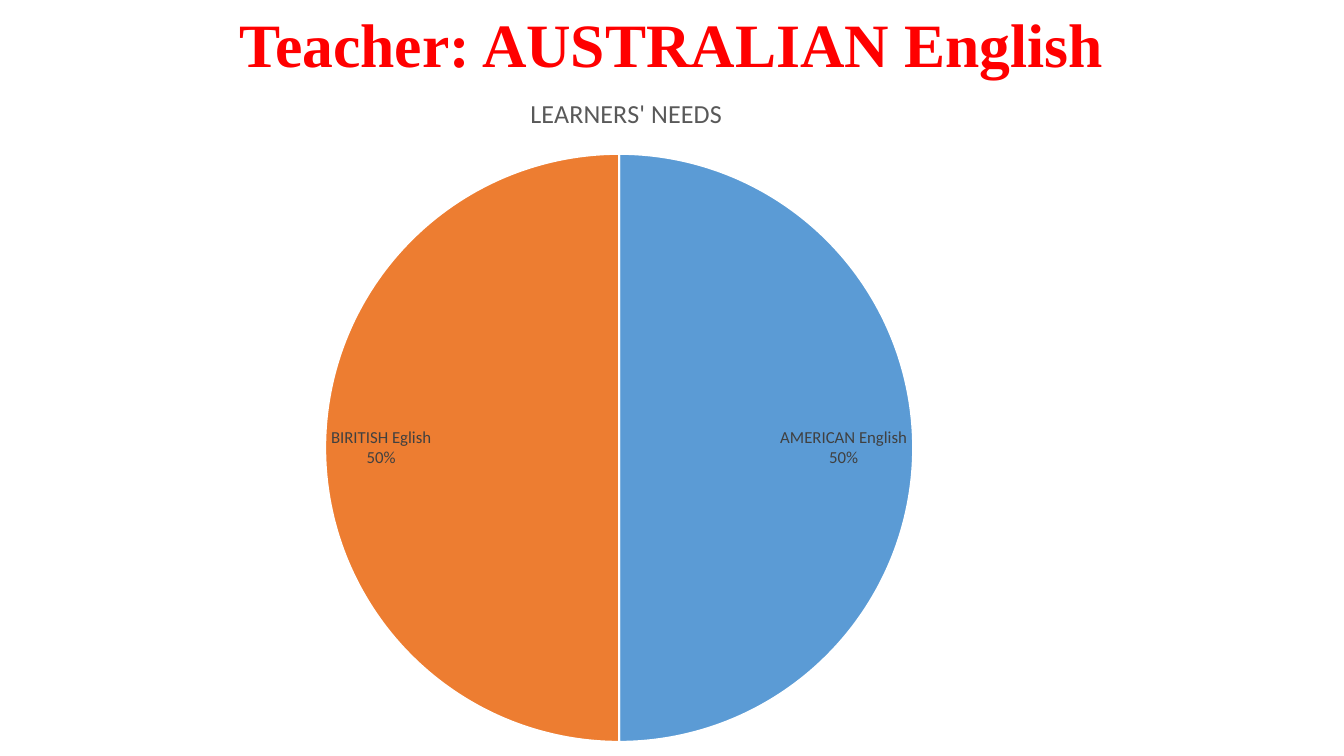
from dataclasses import dataclass

from pptx import Presentation
from pptx.chart.chart import Chart
from pptx.chart.data import CategoryChartData
from pptx.dml.color import RGBColor
from pptx.enum.chart import XL_CHART_TYPE as ChartType, XL_LABEL_POSITION as LabelPosition
from pptx.enum.text import MSO_ANCHOR as Anchor, PP_ALIGN as Align
from pptx.oxml import parse_xml
from pptx.oxml.ns import nsdecls, qn
from pptx.slide import Slide
from pptx.text.text import Font
from pptx.util import Cm, Pt

RED = RGBColor(0xFF, 0x00, 0x00)
BLUE = RGBColor(0x5B, 0x9B, 0xD5)
ORANGE = RGBColor(0xED, 0x7D, 0x31)
WHITE = RGBColor(0xFF, 0xFF, 0xFF)
BLACK = RGBColor(0x00, 0x00, 0x00)
GRAY = RGBColor(0x59, 0x59, 0x59)
DARK_GRAY = RGBColor(0x40, 0x40, 0x40)

NEEDS_TITLE = "LEARNERS' NEEDS"


@dataclass(frozen=True)
class Need:
    variety: str
    share: int
    color: RGBColor


NEEDS = [
    Need("AMERICAN English", 50, BLUE),
    Need("BIRITISH Eglish", 50, ORANGE),
]


def style(font: Font, name: str, size: float, color: RGBColor, bold: bool = False) -> None:
    font.name = name
    font.size = Pt(size)
    font.bold = bold
    font.color.rgb = color


def add_heading(slide: Slide) -> None:
    heading = slide.shapes.title
    heading.left, heading.top = Cm(2.33), Cm(-0.64)
    heading.width, heading.height = Cm(29.21), Cm(3.68)
    frame = heading.text_frame
    frame.text = "Teacher: AUSTRALIAN English"
    frame.vertical_anchor = Anchor.MIDDLE
    frame.word_wrap = True
    line = frame.paragraphs[0]
    line.alignment = Align.CENTER
    line.line_spacing = 0.9
    style(line.font, "Times New Roman", 44, RED, bold=True)


def place_pie(chart: Chart, x: float, y: float, w: float, h: float) -> None:
    area = chart.plots[0]._element.getparent()
    for old in area.findall(qn("c:layout")):
        area.remove(old)
    area.insert(0, parse_xml(
        f'<c:layout {nsdecls("c")}><c:manualLayout><c:layoutTarget val="inner"/>'
        '<c:xMode val="edge"/><c:yMode val="edge"/>'
        f'<c:x val="{x}"/><c:y val="{y}"/><c:w val="{w}"/><c:h val="{h}"/>'
        "</c:manualLayout></c:layout>"
    ))


def add_needs_pie(slide: Slide) -> None:
    needs = CategoryChartData()
    needs.categories = [need.variety for need in NEEDS]
    needs.add_series(NEEDS_TITLE, [need.share for need in NEEDS])
    chart = slide.shapes.add_chart(
        ChartType.PIE, Cm(-2.29), Cm(1.8), Cm(36.15), Cm(17.25), needs
    ).chart
    style(chart.font, "Calibri", 10, BLACK)
    chart.has_legend = False
    chart.has_title = True
    caption = chart.chart_title.text_frame
    caption.text = NEEDS_TITLE
    style(caption.paragraphs[0].font, "Calibri", 18.6, GRAY)
    place_pie(chart, 0.29, 0.12, 0.41, 0.86)

    pie = chart.plots[0]
    pie.vary_by_categories = True
    for index, need in enumerate(NEEDS):
        wedge = pie.series[0].points[index].format
        wedge.fill.solid()
        wedge.fill.fore_color.rgb = need.color
        wedge.line.color.rgb = WHITE
        wedge.line.width = Pt(1.5)

    labels = pie.series[0].data_labels
    labels.show_category_name = True
    labels.show_percentage = True
    labels.show_value = False
    labels.position = LabelPosition.INSIDE_END
    style(labels.font, "Calibri", 12, DARK_GRAY)
    labels._element.find(qn("c:showBubbleSize")).addnext(
        parse_xml(f'<c:separator {nsdecls("c")}>\n</c:separator>')
    )


def main() -> None:
    deck = Presentation()
    deck.slide_width, deck.slide_height = Cm(33.87), Cm(19.05)
    slide = deck.slides.add_slide(deck.slide_layouts[5])
    add_heading(slide)
    add_needs_pie(slide)
    deck.save("out.pptx")


if __name__ == "__main__":
    main()
